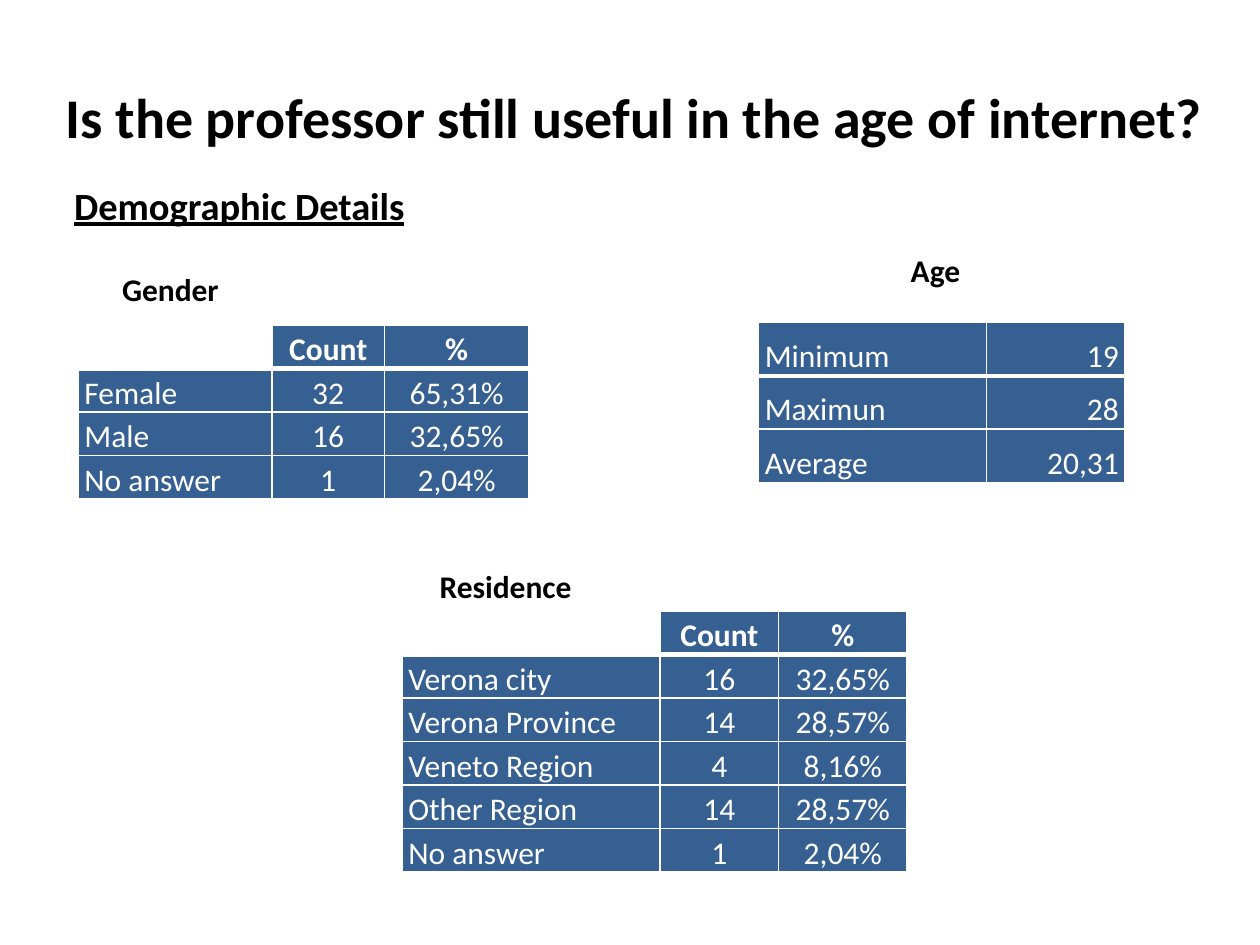
from lxml import etree
from pptx import Presentation
from pptx.dml.color import RGBColor
from pptx.enum import text
from pptx.oxml import ns
from pptx.util import Inches, Pt

BLACK = RGBColor(0, 0, 0)
WHITE = RGBColor(0xFF, 0xFF, 0xFF)
BLUE = RGBColor(0x37, 0x60, 0x92)
FONT = "Calibri"
LEFT, CENTER, RIGHT = text.PP_ALIGN.LEFT, text.PP_ALIGN.CENTER, text.PP_ALIGN.RIGHT

GENDER = [
    ("", "Count", "%"),
    ("Female", "32", "65,31%"),
    ("Male", "16", "32,65%"),
    ("No answer", "1", "2,04%"),
]
AGE = [("Minimum", "19"), ("Maximun", "28"), ("Average", "20,31")]
RESIDENCE = [
    ("", "Count", "%"),
    ("Verona city", "16", "32,65%"),
    ("Verona Province", "14", "28,57%"),
    ("Veneto Region", "4", "8,16%"),
    ("Other Region", "14", "28,57%"),
    ("No answer", "1", "2,04%"),
]


def add_span(para, words, size, color, bold=False, underline=None):
    span = para.add_run()
    span.text = words
    font = span.font
    font.name, font.size, font.bold, font.underline = FONT, Pt(size), bold, underline
    font.color.rgb = color


def place(shape, box):
    shape.left, shape.top, shape.width, shape.height = map(Inches, box)


def add_title(page, box, words):
    title = page.shapes.title
    place(title, box)
    frame = title.text_frame
    frame.vertical_anchor = text.MSO_ANCHOR.MIDDLE
    frame.paragraphs[0].alignment = CENTER
    add_span(frame.paragraphs[0], words, 32, BLACK, bold=True)


def add_heading(page, box, words, size=18, underline=None):
    frame = page.shapes.add_textbox(*map(Inches, box)).text_frame
    frame.word_wrap = False
    frame.auto_size = text.MSO_AUTO_SIZE.SHAPE_TO_FIT_TEXT
    frame.vertical_anchor = text.MSO_ANCHOR.MIDDLE
    add_span(frame.paragraphs[0], words, size, BLACK, True, underline)


def set_borders(cell, top, bottom):
    """Draw white cell borders; widths in points."""
    properties = cell._tc.get_or_add_tcPr()
    for side, width in (("L", 1), ("R", 1), ("T", top), ("B", bottom)):
        line = etree.SubElement(properties, ns.qn(f"a:ln{side}"), w=str(Pt(width)))
        fill = etree.SubElement(line, ns.qn("a:solidFill"))
        etree.SubElement(fill, ns.qn("a:srgbClr"), val=str(WHITE))


def fill_cell(cell, words, row, alignment, bold):
    cell.margin_left = cell.margin_right = Inches(0.05)
    cell.margin_top = cell.margin_bottom = 0
    cell.vertical_anchor = text.MSO_ANCHOR.BOTTOM
    # A thick rule separates the first row from the rest
    set_borders(cell, top=3 if row == 1 else 1, bottom=3 if row == 0 else 1)
    cell.fill.solid()
    cell.fill.fore_color.rgb = BLUE if words else WHITE
    para = cell.text_frame.paragraphs[0]
    para.alignment = alignment
    para.line_spacing = 1.15
    if words:
        add_span(para, words, 18, WHITE, bold)


def add_data_table(page, box, rows, widths, value_alignment, header=True):
    frame = page.shapes.add_table(len(rows), len(widths), *map(Inches, box))
    table = frame.table
    table.first_row = header
    table.horz_banding = False
    for column, width in zip(table.columns, widths):
        column.width = Inches(width)
    for r, values in enumerate(rows):
        table.rows[r].height = Inches(box[3] / len(rows))
        for c, words in enumerate(values):
            alignment = value_alignment if c else LEFT
            fill_cell(table.cell(r, c), words, r, alignment, header and r == 0)


def build_page(deck):
    page = deck.slides.add_slide(deck.slide_layouts[5])
    add_title(page, (0.35, 0.3, 9.37, 1.25),
              "Is the professor still useful in the age of internet?")
    add_heading(page, (0.49, 1.39, 2.85, 0.47), "Demographic Details", 22, True)

    # Gender
    add_heading(page, (0.87, 2.09, 0.98, 0.4), "Gender")
    add_data_table(page, (0.62, 2.58, 3.59, 1.38), GENDER, (1.54, 0.89, 1.15), CENTER)

    # Age
    add_heading(page, (7.13, 1.94, 0.6, 0.4), "Age")
    add_data_table(page, (6.02, 2.56, 2.91, 1.27), AGE, (1.81, 1.1), RIGHT, header=False)

    # Residence
    add_heading(page, (3.39, 4.45, 1.26, 0.4), "Residence")
    add_data_table(page, (3.19, 4.85, 4.01, 2.07), RESIDENCE, (2.05, 0.94, 1.02), CENTER)


def main():
    deck = Presentation()
    deck.slide_width, deck.slide_height = Inches(10), Inches(7.5)
    build_page(deck)
    deck.save("out.pptx")


if __name__ == "__main__":
    main()
